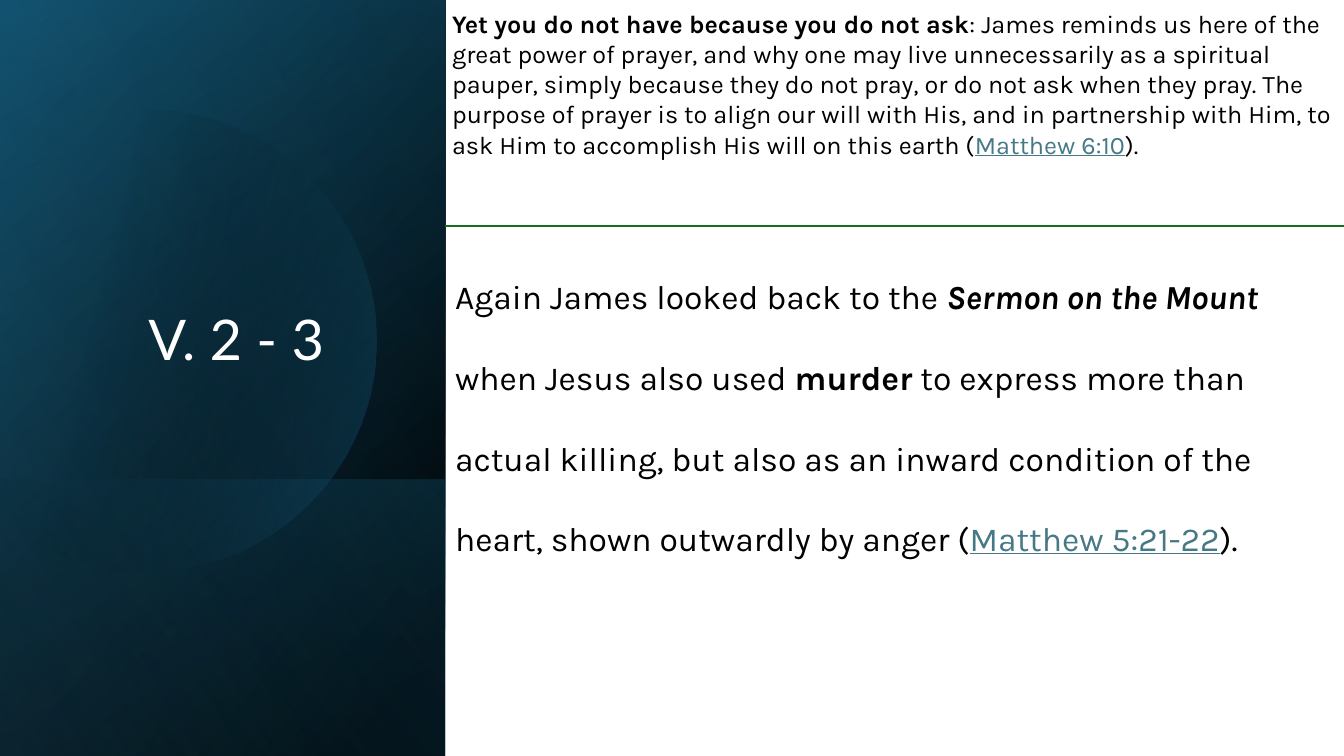
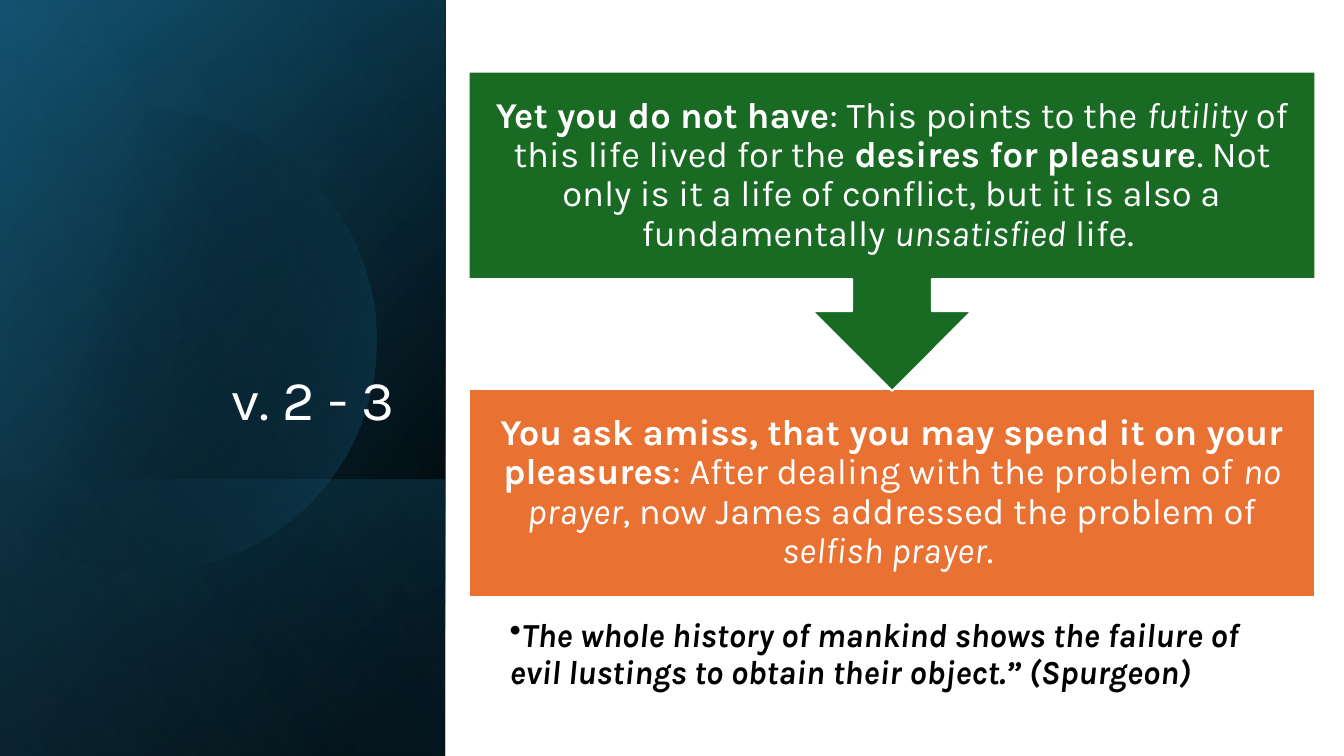
import math

import lxml.etree
import pptx
import pptx.dml.color
import pptx.enum.shapes
import pptx.enum.text
import pptx.oxml.ns
import pptx.util

Pt = pptx.util.Pt
RGB = pptx.dml.color.RGBColor
Align = pptx.enum.text.PP_ALIGN
Anchor = pptx.enum.text.MSO_ANCHOR
Shape = pptx.enum.shapes.MSO_SHAPE
qn = pptx.oxml.ns.qn

BLACK = RGB(0x00, 0x00, 0x00)
WHITE = RGB(0xFF, 0xFF, 0xFF)
NAVY = RGB(0x10, 0x48, 0x62)
TEAL = RGB(0x15, 0x60, 0x82)
SKY = RGB(0x46, 0xB1, 0xE1)
GREEN = RGB(0x19, 0x6B, 0x24)
ORANGE = RGB(0xE9, 0x71, 0x32)
LINK = RGB(0x46, 0x78, 0x86)

WIDE, HIGH = 960, 540
SIDE = 318  # width of the dark panel
FONT = "Karla"

# Panel layers: top, angle, then two stops of (percent, colour, opacity)
LAYERS = [
    (0, 140, (8, BLACK, 100), (100, NAVY, 100)),
    (0, 120, (0, BLACK, 0), (99, TEAL, 46)),
    (342.75, 220, (2, TEAL, 29), (100, BLACK, 30)),
]
DISC = (346, (29, BLACK, 0), (100, TEAL, 43))
GLOW = (0, 210, (0, BLACK, 0), (99, SKY, 11))


class Deck:
    def __init__(self):
        self.prs = pptx.Presentation()
        self.prs.slide_width = Pt(WIDE)
        self.prs.slide_height = Pt(HIGH)
        self.shapes = None

    def page(self):
        """Start a slide with the dark side panel."""
        layout = self.prs.slide_layouts[6]
        self.shapes = self.prs.slides.add_slide(layout).shapes
        for layer in LAYERS:
            self.layer(*layer)
        self.disc()
        self.layer(*GLOW)

    def layer(self, top, angle, *stops):
        box = (Pt(0), Pt(top), Pt(SIDE), Pt(HIGH - top))
        self.fade(self.shapes.add_shape(Shape.RECTANGLE, *box), angle, *stops)

    def disc(self):
        """Draw a circle cut off by the slide's left edge."""
        x, y, r, steps = 103.7, 243.4, 165, 120
        end = math.acos(-x / r)
        turns = [end * (2 * n / steps - 1) for n in range(steps + 1)]
        dots = [(Pt(x + r * math.cos(t)), Pt(y + r * math.sin(t)))
                for t in turns]
        form = self.shapes.build_freeform(*dots[0])
        form.add_line_segments(dots[1:])
        self.fade(form.convert_to_shape(), *DISC)

    def fade(self, shape, angle, *stops):
        """Fill with a two-stop gradient; the angle runs anticlockwise."""
        shape.shadow.inherit = False
        shape.line.fill.background()
        shape.fill.gradient()
        shape.fill.gradient_angle = angle
        for stop, (place, color, _) in zip(shape.fill.gradient_stops, stops):
            stop.position = place / 100
            stop.color.rgb = color
        marks = shape._element.spPr.xpath(".//a:srgbClr")
        for mark, (_, _, alpha) in zip(marks, stops):
            if alpha < 100:
                lxml.etree.SubElement(mark, qn("a:alpha"), val=str(alpha * 1000))

    def fill_text(self, shape, runs, size, color=BLACK, font=FONT,
                  align=Align.LEFT, anchor=Anchor.TOP, inset=None, gap=1.0):
        """Runs are (text, marks): b bold, i italic, u link colour and line."""
        frame = shape.text_frame
        frame.word_wrap = True
        frame.vertical_anchor = anchor
        if inset is not None:
            frame.margin_left = frame.margin_right = Pt(inset)
            frame.margin_top = frame.margin_bottom = Pt(inset)
        para = frame.paragraphs[0]
        para.alignment = align
        para.line_spacing = gap
        para.font.name = font
        para.font.size = Pt(size)
        para.font.color.rgb = color
        for text, marks in runs:
            run = para.add_run()
            run.text = text
            if "b" in marks:
                run.font.bold = True
            if "i" in marks:
                run.font.italic = True
            if "u" in marks:
                run.font.underline = True
                run.font.color.rgb = LINK
        return para

    def text(self, box, runs, size, **style):
        shape = self.shapes.add_textbox(*map(Pt, box))
        return self.fill_text(shape, runs, size, **style)

    def title(self, box, text, **style):
        self.text(box, [(text, "")], 40, color=WHITE, anchor=Anchor.BOTTOM,
                  gap=0.9, **style)

    def card(self, kind, box, fill, runs):
        shape = self.shapes.add_shape(kind, *map(Pt, box))
        shape.shadow.inherit = False
        shape.fill.solid()
        shape.fill.fore_color.rgb = fill
        shape.line.color.rgb = WHITE
        shape.line.width = Pt(1.5)
        self.fill_text(shape, runs, 26, color=WHITE, align=Align.CENTER,
                       anchor=Anchor.MIDDLE, inset=14.4, gap=0.9)

    def rule(self, top):
        line = self.shapes.add_connector(
            pptx.enum.shapes.MSO_CONNECTOR.STRAIGHT,
            Pt(SIDE), Pt(top), Pt(WIDE), Pt(top))
        line.line.color.rgb = GREEN
        line.line.width = Pt(1)
        lxml.etree.SubElement(line._element.spPr, qn("a:effectLst"))

    def quote(self, box, text):
        """Add a bulleted line in bold italics."""
        para = self.text(box, [(text, "bi")], 24, gap=0.9)
        para.space_before = para.space_after = Pt(10.2)
        props = para._p.get_or_add_pPr()
        props.set("marL", "0")
        props.set("indent", str(-Pt(18)))
        mark = lxml.etree.Element(qn("a:buChar"), char="•")
        props.find(qn("a:defRPr")).addprevious(mark)


def prayer(deck):
    deck.page()
    deck.title((46, 132.5, 245.5, 137.5), "V. 2 - 3", font="Lato",
               align=Align.CENTER)
    deck.text((SIDE, 0.7, 642, 160.5), [
        ("Yet you do not have because you do not ask", "b"),
        (": James reminds us here of the great power of prayer, and why one "
         "may live unnecessarily as a spiritual pauper, simply because they "
         "do not pray, or do not ask when they pray. The purpose of prayer "
         "is to align our will with His, and in partnership with Him, to ask "
         "Him to accomplish His will on this earth (", ""),
        ("Matthew 6:10", "u"),
        (").", ""),
    ], 18, inset=5)
    deck.rule(161.3)
    deck.text((SIDE, 161.3, 642, 378), [
        ("Again James looked back to the ", ""),
        ("Sermon on the Mount ", "bi"),
        ("when Jesus also used ", ""),
        ("murder", "b"),
        (" to express more than actual killing, but also as an inward "
         "condition of the heart, shown outwardly by anger (", ""),
        ("Matthew 5:21-22", "u"),
        (").", ""),
    ], 24, inset=7.2, gap=2.0)


def desire(deck):
    deck.page()
    deck.title((36.7, 46, 252, 266.5), "v. 2 - 3", align=Align.RIGHT)
    deck.quote((357, 438.5, 566.6, 88.5),
               "The whole history of mankind shows the failure of evil "
               "lustings to obtain their object.” (Spurgeon)")
    left, wide = 334.8, 604.8
    deck.card(Shape.RECTANGLE, (left, 277.9, wide, 148.3), ORANGE, [
        ("You ask amiss, that you may spend it on your pleasures", "b"),
        (": After dealing with the problem of ", ""),
        ("no prayer", "i"),
        (", now James addressed the problem of ", ""),
        ("selfish prayer", "i"),
        (". ", ""),
    ])
    deck.card(Shape.DOWN_ARROW_CALLOUT, (left, 51.1, wide, 228.2), GREEN, [
        ("Yet you do not have", "b"),
        (": This points to the ", ""),
        ("futility", "i"),
        (" of this life lived for the ", ""),
        ("desires for pleasure", "b"),
        (". Not only is it a life of conflict, but it is also a "
         "fundamentally ", ""),
        ("unsatisfied", "i"),
        (" life. ", ""),
    ])


def main():
    deck = Deck()
    prayer(deck)
    desire(deck)
    deck.prs.save("out.pptx")


if __name__ == "__main__":
    main()
